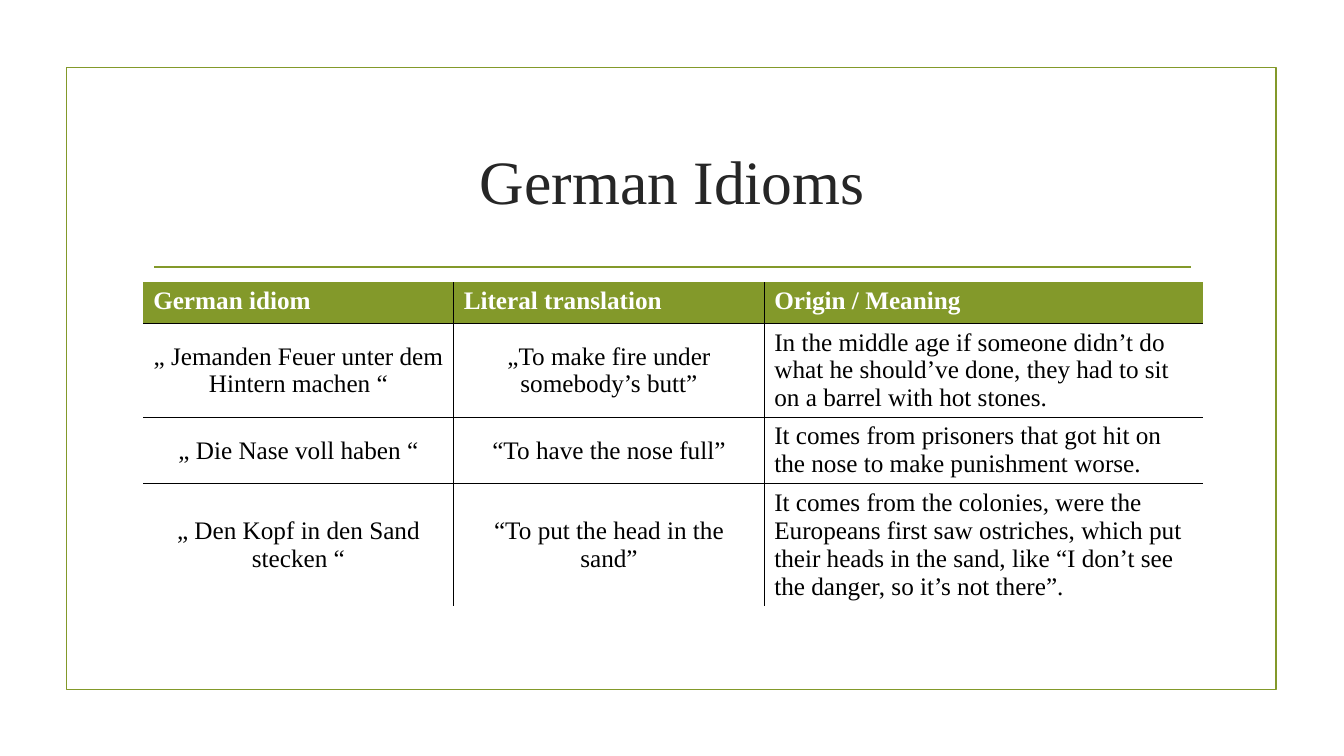
from dataclasses import dataclass

from lxml.etree import SubElement
from pptx import Presentation
from pptx.dml.color import RGBColor
from pptx.enum.shapes import MSO_CONNECTOR, MSO_SHAPE
from pptx.enum.text import MSO_ANCHOR, MSO_AUTO_SIZE, PP_ALIGN
from pptx.oxml.ns import qn
from pptx.util import Inches, Pt


@dataclass(frozen=True)
class Theme:
    font: str = "Times New Roman"
    green: RGBColor = RGBColor(0x83, 0x99, 0x2A)
    title: RGBColor = RGBColor(0x26, 0x26, 0x26)
    black: RGBColor = RGBColor(0, 0, 0)
    white: RGBColor = RGBColor(0xFF, 0xFF, 0xFF)
    title_size: Pt = Pt(44)
    table_size: Pt = Pt(18)
    rule_width: Pt = Pt(1.25)
    border_width: Pt = Pt(1)


THEME = Theme()

COL_WIDTHS = (3.08, 3.08, 4.35)
ROW_HEIGHTS = (0.41, 0.93, 0.66, 1.2)
IDIOMS = (
    ("German idiom", "Literal translation", "Origin / Meaning"),
    (
        "„ Jemanden Feuer unter dem Hintern machen “",
        "„To make fire under somebody’s butt”",
        "In the middle age if someone didn’t do what he should’ve done, "
        "they had to sit on a barrel with hot stones.",
    ),
    (
        "„ Die Nase voll haben “",
        "“To have the nose full”",
        "It comes from prisoners that got hit on the nose to make punishment worse.",
    ),
    (
        "„ Den Kopf in den Sand stecken “",
        "“To put the head in the sand”",
        "It comes from the colonies, were the Europeans first saw ostriches, "
        "which put their heads in the sand, like “I don’t see the danger, "
        "so it’s not there”.",
    ),
)


def style_paragraph(p, size, color, align, bold=False):
    p.alignment = align
    p.font.name = THEME.font
    p.font.size = size
    p.font.color.rgb = color
    p.font.bold = bold


def add_frame(s):
    sp = s.shapes.add_shape(
        MSO_SHAPE.RECTANGLE, Inches(0.66), Inches(0.67), Inches(12), Inches(6.17)
    )
    sp.shadow.inherit = False
    sp.fill.background()
    sp.line.color.rgb = THEME.green
    sp.line.width = THEME.rule_width


def add_rule(s):
    y = Inches(2.65)
    rule = s.shapes.add_connector(
        MSO_CONNECTOR.STRAIGHT, Inches(1.53), y, Inches(11.81), y
    )
    rule.line.color.rgb = THEME.green
    rule.line.width = THEME.rule_width
    SubElement(rule._element.spPr, qn("a:effectLst"))


def set_title(s, text):
    title = s.shapes.title
    title.left, title.top = Inches(1.42), Inches(1.07)
    title.width, title.height = Inches(10.5), Inches(1.43)
    tf = title.text_frame
    tf.text = text
    tf.word_wrap = True
    tf.auto_size = MSO_AUTO_SIZE.NONE
    tf.vertical_anchor = MSO_ANCHOR.MIDDLE
    style_paragraph(tf.paragraphs[0], THEME.title_size, THEME.title, PP_ALIGN.CENTER)


def set_borders(cell, sides):
    tc_pr = cell._tc.get_or_add_tcPr()
    for side, visible in sides.items():
        ln = SubElement(tc_pr, qn(f"a:ln{side}"), w=str(THEME.border_width))
        if visible:
            fill = SubElement(ln, qn("a:solidFill"))
            SubElement(fill, qn("a:srgbClr"), val=str(THEME.black))
        else:
            SubElement(ln, qn("a:noFill"))


def format_cell(cell, text, header, centered):
    cell.text = text
    cell.vertical_anchor = MSO_ANCHOR.MIDDLE if centered else MSO_ANCHOR.TOP
    if header:
        cell.fill.solid()
        cell.fill.fore_color.rgb = THEME.green
    else:
        cell.fill.background()
    style_paragraph(
        cell.text_frame.paragraphs[0],
        THEME.table_size,
        THEME.white if header else THEME.black,
        PP_ALIGN.CENTER if centered else PP_ALIGN.LEFT,
        bold=header,
    )


def add_idiom_table(s):
    last_row, last_col = len(IDIOMS) - 1, len(COL_WIDTHS) - 1
    table = s.shapes.add_table(
        len(IDIOMS), len(COL_WIDTHS), Inches(1.42), Inches(2.8),
        Inches(sum(COL_WIDTHS)), Inches(sum(ROW_HEIGHTS)),
    ).table
    table.horz_banding = False
    for column, width in zip(table.columns, COL_WIDTHS):
        column.width = Inches(width)
    for row, height in zip(table.rows, ROW_HEIGHTS):
        row.height = Inches(height)
    for i, texts in enumerate(IDIOMS):
        for j, text in enumerate(texts):
            cell = table.cell(i, j)
            set_borders(
                cell, {"L": j > 0, "R": j < last_col, "T": i > 0, "B": i < last_row}
            )
            format_cell(cell, text, header=i == 0, centered=i > 0 and j < last_col)


def main():
    prs = Presentation()
    prs.slide_width, prs.slide_height = Inches(13.33), Inches(7.5)
    s = prs.slides.add_slide(prs.slide_layouts[5])
    add_frame(s)
    add_rule(s)
    set_title(s, "German Idioms")
    add_idiom_table(s)
    prs.save("out.pptx")


if __name__ == "__main__":
    main()
